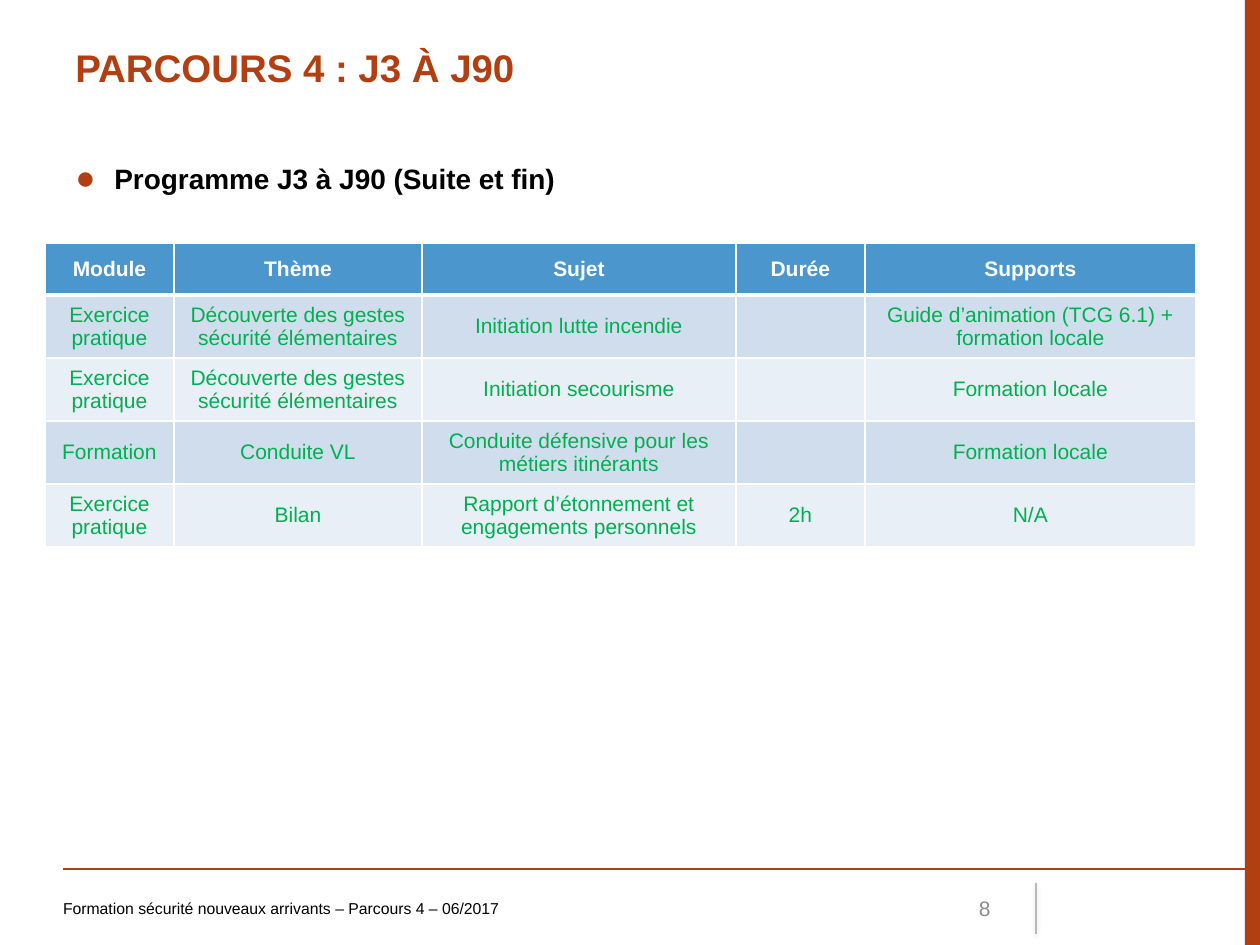
from dataclasses import dataclass, field

from lxml import etree
from pptx import Presentation
from pptx.dml.color import RGBColor
from pptx.enum.shapes import MSO_CONNECTOR, MSO_SHAPE
from pptx.enum.text import MSO_ANCHOR, PP_ALIGN
from pptx.oxml.ns import qn
from pptx.util import Emu, Pt

PX = 914400 // 126
LEFT, CENTER, RIGHT = PP_ALIGN.LEFT, PP_ALIGN.CENTER, PP_ALIGN.RIGHT
TOP, MIDDLE = MSO_ANCHOR.TOP, MSO_ANCHOR.MIDDLE
STRAIGHT, RECTANGLE = MSO_CONNECTOR.STRAIGHT, MSO_SHAPE.RECTANGLE
RUST, BLACK, WHITE, GREY = "B23F12", "000000", "FFFFFF", "8C8C8C"
HEADER_BLUE, BANDS, GREEN = "4A96CD", ("D0DDED", "E9EFF6"), "00B050"
GESTURES = "Découverte des gestes sécurité élémentaires"
COLUMNS = (129, 248, 314, 129, 331)
ROW_HEIGHT = 52
ROWS = (
    ("Module", "Thème", "Sujet", "Durée", "Supports"),
    ("Exercice pratique", GESTURES, "Initiation lutte incendie", "",
     "Guide d’animation (TCG 6.1) + formation locale"),
    ("Exercice pratique", GESTURES, "Initiation secourisme", "", "Formation locale"),
    ("Formation", "Conduite VL", "Conduite défensive pour les métiers itinérants", "",
     "Formation locale"),
    ("Exercice pratique", "Bilan", "Rapport d’étonnement et engagements personnels",
     "2h", "N/A"),
)


@dataclass
class Label:
    """A text box with one formatted paragraph."""
    text: str
    place: tuple[int, int, int, int]
    size: int
    colour: str
    bold: bool = False
    align: PP_ALIGN = LEFT
    anchor: MSO_ANCHOR = TOP
    frame: dict = field(default_factory=dict)
    bullet: bool = False


@dataclass
class Rule:
    """A straight line between two points."""
    start: tuple[int, int]
    end: tuple[int, int]
    colour: str
    width: float
    opacity: int = 100
    shadow: bool = False


LABELS = (
    Label("PARCOURS 4 : J3 À J90", (63, 38, 1133, 87), 22, RUST, True),
    Label("8", (903, 883, 100, 50), 12, GREY, align=RIGHT, anchor=MIDDLE),
    Label("Programme J3 à J90 (Suite et fin)", (63, 155, 1133, 59), 16, BLACK, True,
          bullet=True),
    Label("Formation sécurité nouveaux arrivants – Parcours 4 – 06/2017",
          (63, 883, 766, 50), 9, BLACK, anchor=MIDDLE, frame={"margin_left": 0}),
)
RULES = (
    Rule((63, 869), (1260, 869), RUST, 0.75),
    Rule((1036, 883), (1036, 934), BLACK, 0.5, opacity=70, shadow=True),
)


def px(value: int) -> Emu:
    """Turn pixels into EMU."""
    return Emu(value * PX)


def rgb(colour: str) -> RGBColor:
    """Turn a hex string into a colour."""
    return RGBColor.from_string(colour)


def child(parent, tag: str, **attributes):
    """Append an XML element with the given attributes."""
    values = {name: str(value) for name, value in attributes.items()}
    return etree.SubElement(parent, qn(tag), values)


def apply(target, formats: dict) -> None:
    """Set each attribute named in a dict of format values."""
    for name, value in formats.items():
        setattr(target, name, value)


def write(para, text: str, size: int, colour: str, bold: bool) -> None:
    """Add one formatted span to a paragraph."""
    span = para.add_run()
    span.text = text
    apply(span.font, {"name": "Arial", "size": Pt(size), "bold": bold})
    span.font.color.rgb = rgb(colour)


def add_bullet(para) -> None:
    """Give a paragraph a hanging round bullet."""
    properties = para._p.get_or_add_pPr()
    properties.set("marL", str(px(39)))
    properties.set("indent", str(px(-39)))
    child(child(properties, "a:buClr"), "a:srgbClr", val=RUST)
    child(properties, "a:buSzPct", val=120000)
    child(properties, "a:buFont", typeface="Arial")
    child(properties, "a:buChar", char="●")


def add_label(page, label: Label) -> None:
    """Draw a text box."""
    box = page.shapes.add_textbox(*map(px, label.place))
    frame = box.text_frame
    apply(frame, {"word_wrap": True, "vertical_anchor": label.anchor} | label.frame)
    para = frame.paragraphs[0]
    if label.bullet:
        add_bullet(para)
    para.alignment = label.align
    write(para, label.text, label.size, label.colour, label.bold)


def add_rule(page, rule: Rule) -> None:
    """Draw a line, with a soft shadow if asked."""
    line = page.shapes.add_connector(STRAIGHT, *map(px, rule.start + rule.end))
    line.line.color.rgb = rgb(rule.colour)
    line.line.width = Pt(rule.width)
    properties = line._element.spPr
    if rule.opacity < 100:
        colour = properties.find(".//" + qn("a:srgbClr"))
        child(colour, "a:alpha", val=rule.opacity * 1000)
    effects = child(properties, "a:effectLst")
    if rule.shadow:
        shadow = child(effects, "a:outerShdw", blurRad=Pt(3.1), dist=Pt(1.6),
                       dir=5400000, rotWithShape=0)
        child(child(shadow, "a:srgbClr", val=BLACK), "a:alpha", val=38000)


def add_band(page) -> None:
    """Draw the coloured band on the right edge."""
    band = page.shapes.add_shape(RECTANGLE, px(1245), 0, px(15), px(945))
    band.shadow.inherit = False
    band.fill.solid()
    band.fill.fore_color.rgb = rgb(RUST)
    band.line.fill.background()


def add_borders(cell, top: int, bottom: int) -> None:
    """Give a cell white borders."""
    properties = cell._tc.get_or_add_tcPr()
    widths = {"a:lnL": 1, "a:lnR": 1, "a:lnT": top, "a:lnB": bottom}
    for tag, width in widths.items():
        border = child(properties, tag, w=Pt(width))
        child(child(border, "a:solidFill"), "a:srgbClr", val=WHITE)


def add_programme(page) -> None:
    """Draw the programme table."""
    table = page.shapes.add_table(len(ROWS), len(COLUMNS), px(45), px(243),
                                  px(sum(COLUMNS)), px(ROW_HEIGHT * len(ROWS))).table
    for column, width in zip(table.columns, COLUMNS):
        column.width = px(width)
    for index, texts in enumerate(ROWS):
        header = index == 0
        fill = HEADER_BLUE if header else BANDS[(index - 1) % 2]
        for position, text in enumerate(texts):
            cell = table.cell(index, position)
            cell.vertical_anchor = MIDDLE
            add_borders(cell, 3 if index == 1 else 1, 3 if header else 1)
            cell.fill.solid()
            cell.fill.fore_color.rgb = rgb(fill)
            if text:
                para = cell.text_frame.paragraphs[0]
                para.alignment = CENTER
                write(para, text, 12, WHITE if header else GREEN, header)


def main() -> None:
    """Build and save the slide."""
    deck = Presentation()
    apply(deck, {"slide_width": px(1260), "slide_height": px(945)})
    page = deck.slides.add_slide(deck.slide_layouts[6])
    add_band(page)
    for rule in RULES:
        add_rule(page, rule)
    for label in LABELS:
        add_label(page, label)
    add_programme(page)
    deck.save("out.pptx")


if __name__ == "__main__":
    main()
